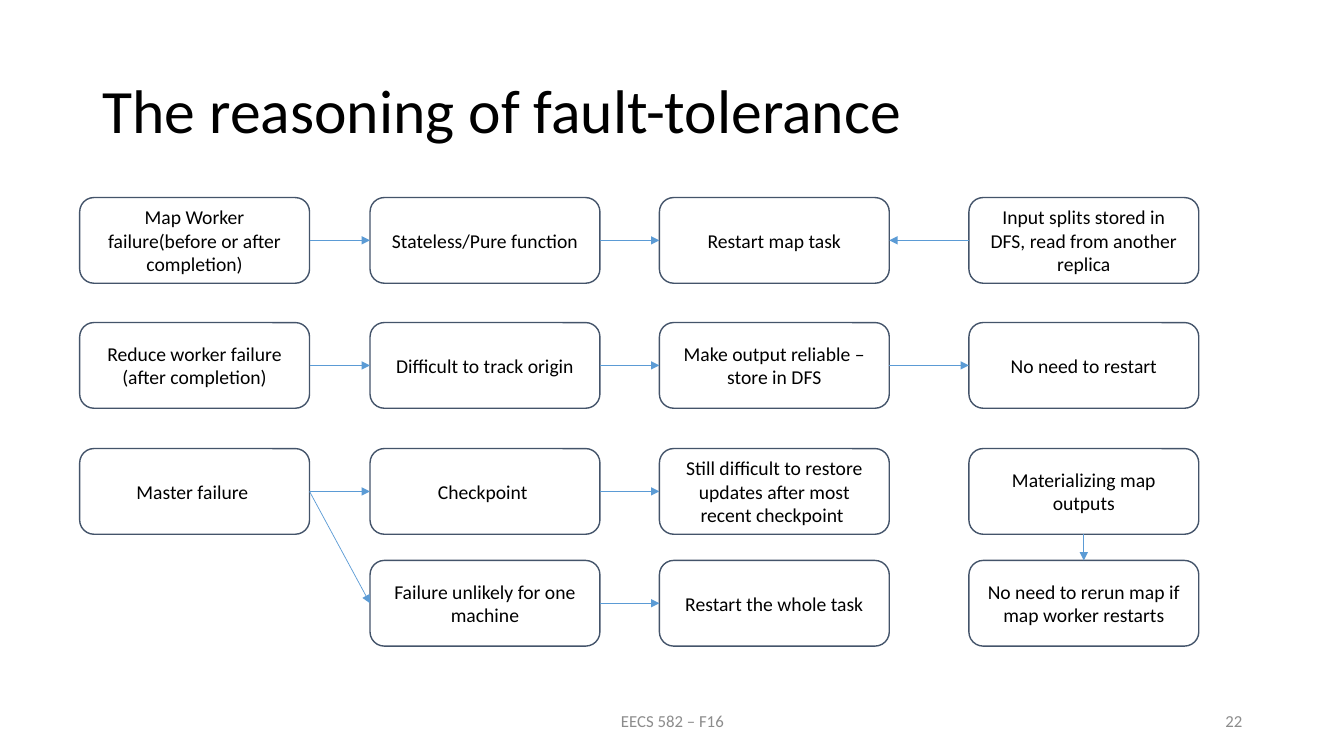
from dataclasses import dataclass
from typing import Any

from lxml import etree
from pptx import Presentation
from pptx import util as u
from pptx.dml import color
from pptx.enum import shapes, text
from pptx.oxml import ns

FONT = "Calibri"
INK, GREY, OUTLINE, ARROW = "000000", "8C8C8C", "44546A", "5B9BD5"
COLUMNS = (0.79, 3.67, 6.54, 9.61)
ROWS = (1.96, 3.2, 4.45, 5.56)
BOX_WIDTH, BOX_HEIGHT = 2.28, 0.85
TOP, LEFT, BOTTOM, RIGHT = range(4)  # connection sites of a box
Align = text.PP_ALIGN


@dataclass(frozen=True)
class Label:
    wording: str
    area: tuple[float, float, float, float]
    size: int
    hue: str
    align: Any
    spacing: float = 1.0


@dataclass(frozen=True)
class Step:
    row: int
    column: int
    wording: str


@dataclass(frozen=True)
class Link:
    start: tuple[int, int]  # row, column
    end: tuple[int, int]
    exit: int = RIGHT
    entry: int = LEFT


LABELS = (
    Label("The reasoning of fault-tolerance", (0.92, 0.4, 11.5, 1.45), 44, INK, Align.LEFT, 0.9),
    Label("EECS 582 – F16", (4.42, 6.95, 4.5, 0.4), 12, GREY, Align.CENTER),
    Label("22", (9.42, 6.95, 3, 0.4), 12, GREY, Align.RIGHT),
)
STEPS = (
    Step(0, 0, "Map Worker failure(before or after completion)"),
    Step(0, 1, "Stateless/Pure function"),
    Step(0, 2, "Restart map task"),
    Step(0, 3, "Input splits stored in DFS, read from another replica"),
    Step(1, 0, "Reduce worker failure (after completion)"),
    Step(1, 1, "Difficult to track origin"),
    Step(1, 2, "Make output reliable – store in DFS"),
    Step(1, 3, "No need to restart"),
    Step(2, 0, "Master failure "),
    Step(2, 1, "Checkpoint "),
    Step(2, 2, "Still difficult to restore updates after most recent checkpoint "),
    Step(2, 3, "Materializing map outputs"),
    Step(3, 1, "Failure unlikely for one machine"),
    Step(3, 2, "Restart the whole task"),
    Step(3, 3, "No need to rerun map if map worker restarts"),
)
LINKS = (
    *(Link((row, column), (row, column + 1)) for row in range(3) for column in range(2)),
    Link((0, 3), (0, 2), LEFT, RIGHT),
    Link((1, 2), (1, 3)),
    Link((2, 0), (3, 1)),
    Link((3, 1), (3, 2)),
    Link((2, 3), (3, 3), BOTTOM, TOP),
)


def rgb(value: str) -> color.RGBColor:
    return color.RGBColor.from_string(value)


def apply(target: Any, values: dict[str, Any]) -> None:
    for name, value in values.items():
        setattr(target, name, value)


def write(holder: Any, wording: str, size: int, hue: str, align: Any, spacing: float = 1.0) -> None:
    frame = holder.text_frame
    apply(frame, {"word_wrap": True, "vertical_anchor": text.MSO_ANCHOR.MIDDLE})
    paragraph = frame.paragraphs[0]
    apply(paragraph, {"alignment": align, "line_spacing": spacing})
    run = paragraph.add_run()
    run.text = wording
    apply(run.font, {"name": FONT, "size": u.Pt(size)})
    run.font.color.rgb = rgb(hue)


def draw_label(slide: Any, label: Label) -> None:
    holder = slide.shapes.add_textbox(*map(u.Inches, label.area))
    write(holder, label.wording, label.size, label.hue, label.align, label.spacing)


def draw_step(slide: Any, step: Step) -> Any:
    area = (COLUMNS[step.column], ROWS[step.row], BOX_WIDTH, BOX_HEIGHT)
    box = slide.shapes.add_shape(shapes.MSO_SHAPE.ROUNDED_RECTANGLE, *map(u.Inches, area))
    box.shadow.inherit = False
    box.fill.background()
    box.line.color.rgb = rgb(OUTLINE)
    box.line.width = u.Pt(1)
    write(box, step.wording, 14, INK, Align.CENTER)
    return box


def draw_link(slide: Any, link: Link, boxes: dict[tuple[int, int], Any]) -> None:
    arrow = slide.shapes.add_connector(shapes.MSO_CONNECTOR.STRAIGHT, 0, 0, 0, 0)
    arrow.begin_connect(boxes[link.start], link.exit)
    arrow.end_connect(boxes[link.end], link.entry)
    arrow.line.color.rgb = rgb(ARROW)
    arrow.line.width = u.Pt(0.5)
    # Arrowhead, and an empty effect list against the shadow
    properties = arrow.line._get_or_add_ln()
    etree.SubElement(properties, ns.qn("a:tailEnd"), type="triangle")
    etree.SubElement(properties.getparent(), ns.qn("a:effectLst"))


def main() -> None:
    deck = Presentation()
    apply(deck, {"slide_width": u.Inches(13.33), "slide_height": u.Inches(7.5)})
    slide = deck.slides.add_slide(deck.slide_layouts[6])

    # Title and footer
    for label in LABELS:
        draw_label(slide, label)

    # Flow of failures and remedies
    boxes = {(step.row, step.column): draw_step(slide, step) for step in STEPS}
    for link in LINKS:
        draw_link(slide, link, boxes)

    deck.save("out.pptx")


if __name__ == "__main__":
    main()
